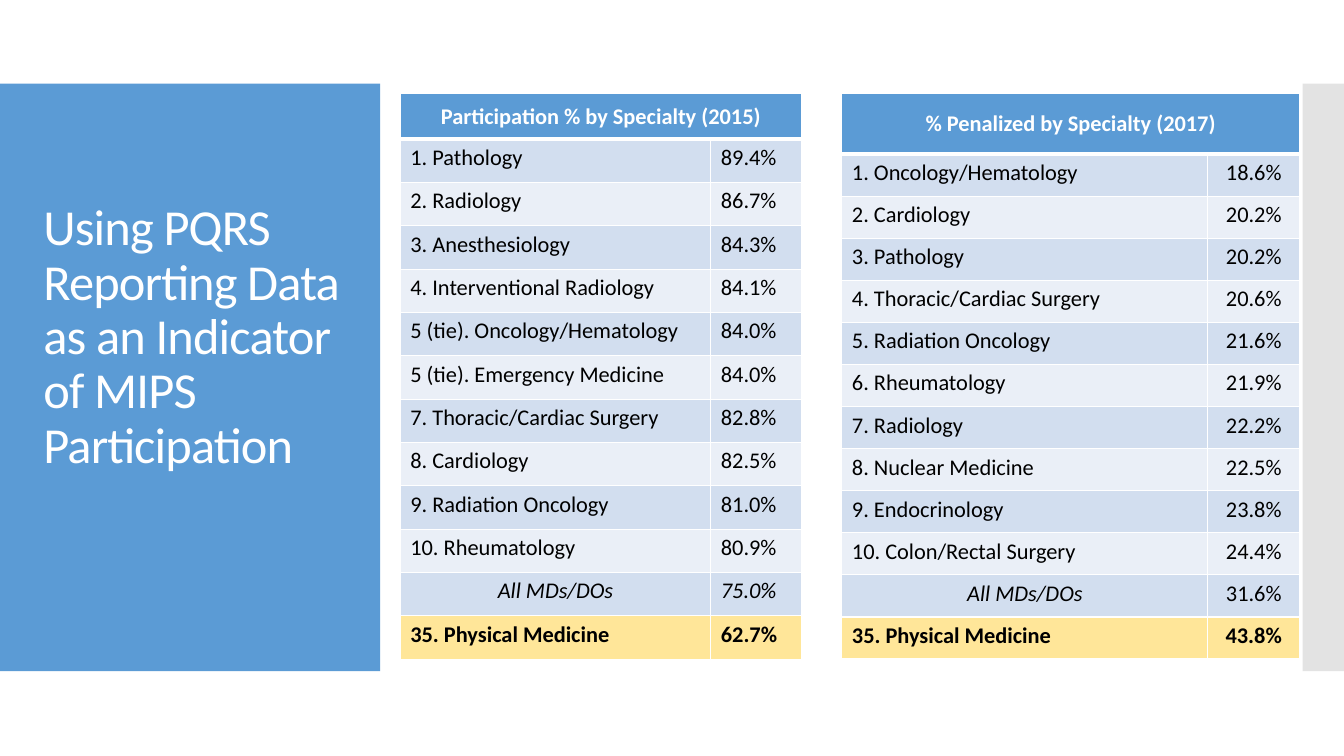
import pptx
import pptx.util
import pptx.dml.color
import pptx.enum.shapes
import pptx.enum.text
import pptx.oxml.ns
import lxml.etree

Inches = pptx.util.Inches
Pt = pptx.util.Pt
RGBColor = pptx.dml.color.RGBColor
PP_ALIGN = pptx.enum.text.PP_ALIGN
MSO_ANCHOR = pptx.enum.text.MSO_ANCHOR
qn = pptx.oxml.ns.qn

BLUE = RGBColor(0x5B, 0x9B, 0xD5)
GRAY = RGBColor(0xC8, 0xC8, 0xC8)
WHITE = RGBColor(0xFF, 0xFF, 0xFF)
BLACK = RGBColor(0x00, 0x00, 0x00)
DARK_BAND = RGBColor(0xD2, 0xDE, 0xEF)
LIGHT_BAND = RGBColor(0xEA, 0xEF, 0xF7)
HIGHLIGHT = RGBColor(0xFF, 0xE6, 0x99)

PARTICIPATION = [
    ("1. Pathology", "89.4%"),
    ("2. Radiology", "86.7%"),
    ("3. Anesthesiology", "84.3%"),
    ("4. Interventional Radiology", "84.1%"),
    ("5 (tie). Oncology/Hematology", "84.0%"),
    ("5 (tie). Emergency Medicine", "84.0%"),
    ("7. Thoracic/Cardiac Surgery", "82.8%"),
    ("8. Cardiology", "82.5%"),
    ("9. Radiation Oncology", "81.0%"),
    ("10. Rheumatology", "80.9%"),
    ("All MDs/DOs", "75.0%"),
    ("35. Physical Medicine", "62.7%"),
]
PENALIZED = [
    ("1. Oncology/Hematology", "18.6%"),
    ("2. Cardiology", "20.2%"),
    ("3. Pathology", "20.2%"),
    ("4. Thoracic/Cardiac Surgery", "20.6%"),
    ("5. Radiation Oncology", "21.6%"),
    ("6. Rheumatology", "21.9%"),
    ("7. Radiology", "22.2%"),
    ("8. Nuclear Medicine", "22.5%"),
    ("9. Endocrinology", "23.8%"),
    ("10. Colon/Rectal Surgery", "24.4%"),
    ("All MDs/DOs", "31.6%"),
    ("35. Physical Medicine", "43.8%"),
]


def write_text(frame, text, size=16, color=BLACK, bold=False, italic=False,
               align=PP_ALIGN.LEFT, line_spacing=None, tracking=None):
    paragraph = frame.paragraphs[0]
    paragraph.alignment = align
    paragraph.line_spacing = line_spacing
    run = paragraph.add_run()
    run.text = text
    run.font.name = "Calibri"
    run.font.size = Pt(size)
    run.font.bold = bold
    run.font.italic = italic
    run.font.color.rgb = color
    if tracking:
        run.font._element.set("spc", str(round(tracking * 100)))


def add_panel(slide, left, top, width, height, color, opacity=100):
    panel = slide.shapes.add_shape(
        pptx.enum.shapes.MSO_SHAPE.RECTANGLE,
        Inches(left), Inches(top), Inches(width), Inches(height))
    panel.shadow.inherit = False
    panel.line.fill.background()
    panel.fill.solid()
    panel.fill.fore_color.rgb = color
    if opacity < 100:
        tint = panel.element.spPr.find(qn("a:solidFill"))[0]
        lxml.etree.SubElement(tint, qn("a:alpha"), val=str(opacity * 1000))


def add_title_panel(slide, left, top, width, height):
    add_panel(slide, left, top, width, height, BLUE)
    title = slide.shapes.title
    title.left, title.top = Inches(left + 0.33), Inches(top + 2.22)
    title.width, title.height = Inches(width - 0.53), Inches(0.61)
    frame = title.text_frame
    frame.word_wrap = True
    frame.auto_size = pptx.enum.text.MSO_AUTO_SIZE.NONE
    frame.vertical_anchor = MSO_ANCHOR.MIDDLE
    write_text(frame, "Using PQRS Reporting Data as an Indicator of MIPS Participation",
               size=36, color=WHITE, line_spacing=0.9, tracking=-0.6)
    title.element.getparent().append(title.element)


def style_cell(cell, color, top_border=1, bottom_border=1):
    properties = cell._tc.get_or_add_tcPr()
    borders = {"lnL": 1, "lnR": 1, "lnT": top_border, "lnB": bottom_border}
    for side, weight in borders.items():
        border = lxml.etree.SubElement(properties, qn("a:" + side), w=str(Pt(weight)))
        paint = lxml.etree.SubElement(border, qn("a:solidFill"))
        lxml.etree.SubElement(paint, qn("a:srgbClr"), val=str(WHITE))
    cell.fill.solid()
    cell.fill.fore_color.rgb = color


def add_ranking(slide, left, top, width, height, heading, ranking,
                header_height, rate_width, rate_align, italic_average):
    table = slide.shapes.add_table(
        len(ranking) + 1, 2,
        Inches(left), Inches(top), Inches(width), Inches(height)).table
    table.columns[0].width = Inches(width - rate_width)
    table.columns[1].width = Inches(rate_width)
    table.rows[0].height = Inches(header_height)

    header = table.cell(0, 0)
    header.merge(table.cell(0, 1))
    for cell in table.rows[0].cells:
        style_cell(cell, BLUE, bottom_border=3)
    header.vertical_anchor = MSO_ANCHOR.MIDDLE
    write_text(header.text_frame, heading, color=WHITE, bold=True, align=PP_ALIGN.CENTER)

    for row, (specialty, rate) in enumerate(ranking, start=1):
        table.rows[row].height = Inches((height - header_height) / len(ranking))
        average = specialty == "All MDs/DOs"
        highlighted = row == len(ranking)
        band = HIGHLIGHT if highlighted else DARK_BAND if row % 2 else LIGHT_BAND
        specialty_cell, rate_cell = table.cell(row, 0), table.cell(row, 1)
        for cell in (specialty_cell, rate_cell):
            style_cell(cell, band, top_border=3 if row == 1 else 1)
        write_text(specialty_cell.text_frame, specialty, bold=highlighted, italic=average,
                   align=PP_ALIGN.CENTER if average else PP_ALIGN.LEFT)
        write_text(rate_cell.text_frame, rate, bold=highlighted,
                   italic=average and italic_average, align=rate_align)


def main():
    presentation = pptx.Presentation()
    presentation.slide_width = Inches(13.33)
    presentation.slide_height = Inches(7.5)
    slide = presentation.slides.add_slide(presentation.slide_layouts[5])
    add_title_panel(slide, 0, 0.83, 3.77, 5.83)
    add_panel(slide, 12.92, 0.83, 0.41, 5.83, GRAY, opacity=50)
    add_ranking(slide, 3.97, 0.93, 3.98, 5.61, "Participation % by Specialty (2015)",
                PARTICIPATION, header_height=0.45, rate_width=0.9,
                rate_align=PP_ALIGN.LEFT, italic_average=True)
    add_ranking(slide, 8.35, 0.93, 4.54, 5.61, "% Penalized by Specialty (2017)",
                PENALIZED, header_height=0.6, rate_width=0.91,
                rate_align=PP_ALIGN.CENTER, italic_average=False)
    presentation.save("out.pptx")


if __name__ == "__main__":
    main()
